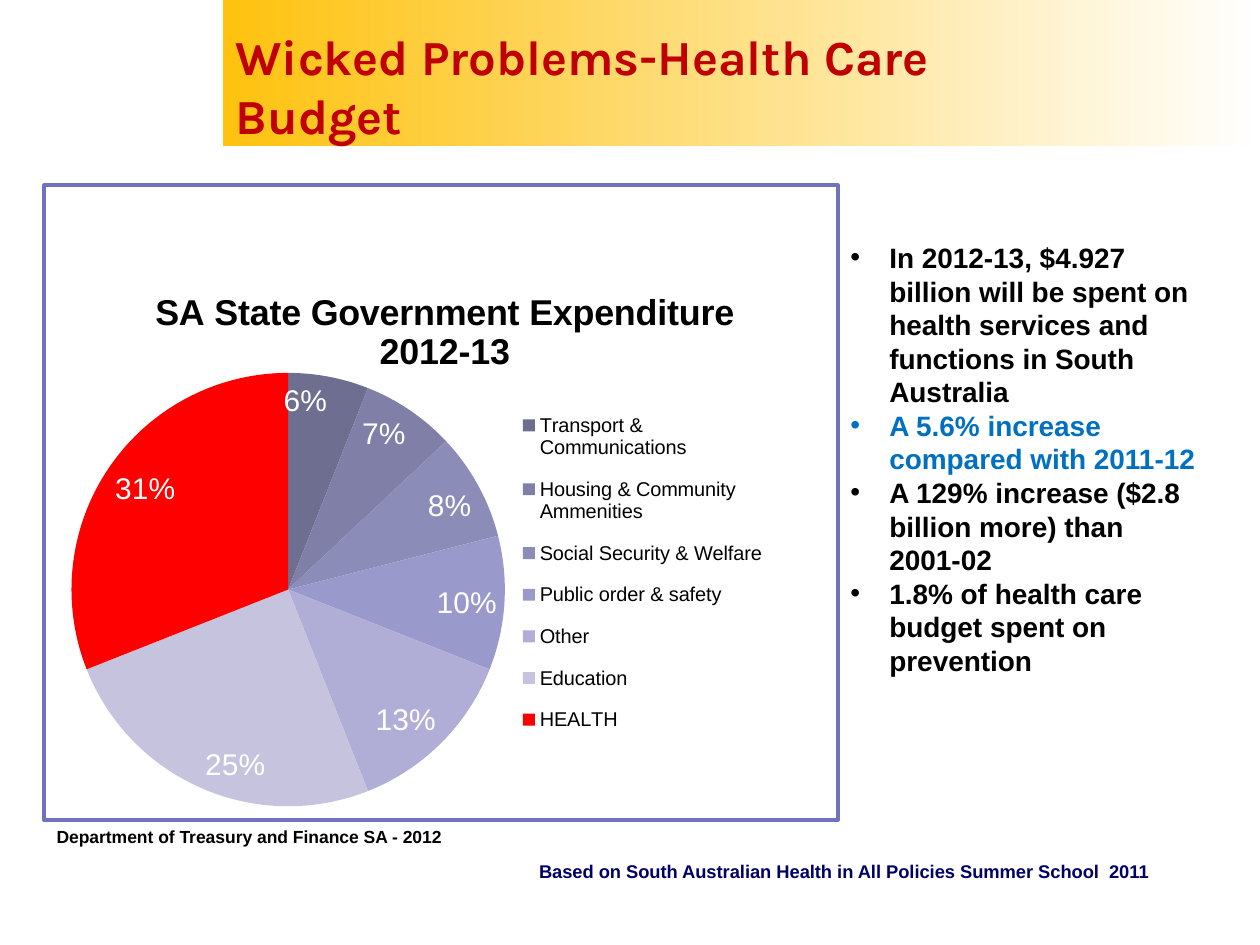
from lxml import etree
from pptx import Presentation
from pptx.chart.data import CategoryChartData
from pptx.dml.color import RGBColor
from pptx.enum.chart import XL_CHART_TYPE, XL_LABEL_POSITION, XL_LEGEND_POSITION
from pptx.enum.shapes import MSO_SHAPE
from pptx.enum.text import MSO_ANCHOR, PP_ALIGN
from pptx.oxml import parse_xml
from pptx.oxml.ns import nsdecls, qn
from pptx.util import Inches, Pt

TITLE = "Wicked Problems-Health Care Budget"
CHART_TITLE = "SA State Government Expenditure 2012-13"
EXPENDITURE = [  # category, share, slice colour
    ("Transport & Communications", 0.06, "6E6E91"),
    ("Housing & Community Ammenities", 0.07, "807FA8"),
    ("Social Security & Welfare", 0.08, "8C8CB9"),
    ("Public order & safety", 0.10, "9A99CC"),
    ("Other", 0.13, "B0AED6"),
    ("Education", 0.25, "C5C3DE"),
    ("HEALTH", 0.31, "FF0000"),
]
BULLETS = [
    ("In 2012-13, $4.927 billion will be spent on health services and "
     "functions in South Australia", "000000"),
    ("A 5.6% increase compared with 2011-12", "0070C0"),
    ("A 129% increase ($2.8 billion more) than 2001-02", "000000"),
    ("1.8% of health care budget spent on prevention", "000000"),
]
NOTES = [  # text, box, size, colour
    ("Department of Treasury and Finance SA - 2012",
     (0.35, 6.51, 3.31, 0.27), 10, "000000"),
    ("Based on South Australian Health in All Policies Summer School\u00a0 2011".replace("\u00a0", " "),
     (4.18, 6.78, 5.23, 0.28), 10.5, "000066"),
]


def rgb(value):
    return RGBColor.from_string(value)


def set_font(font, size, color, bold=False, name="Arial"):
    font.name, font.size, font.bold = name, Pt(size), bold
    font.color.rgb = rgb(color)


def add_run(paragraph, text, size, color, name="Arial"):
    run = paragraph.add_run()
    run.text = text
    set_font(run.font, size, color, True, name)


def add_rectangle(slide, box):
    shape = slide.shapes.add_shape(MSO_SHAPE.RECTANGLE, *map(Inches, box))
    shape.shadow.inherit = False
    return shape


def add_text_frame(slide, box):
    frame = slide.shapes.add_textbox(*map(Inches, box)).text_frame
    frame.word_wrap = True
    return frame


def set_layout(parent, successor_tags, x, y, w, h, inner=False):
    """Place a chart part by fractions of the chart area."""
    for old in parent.findall(qn("c:layout")):
        parent.remove(old)
    target = '<c:layoutTarget val="inner"/>' if inner else ""
    layout = parse_xml(
        f'<c:layout {nsdecls("c")}><c:manualLayout>{target}'
        '<c:xMode val="edge"/><c:yMode val="edge"/>'
        f'<c:x val="{x}"/><c:y val="{y}"/><c:w val="{w}"/><c:h val="{h}"/>'
        '</c:manualLayout></c:layout>')
    next(child for child in parent
         if child.tag in map(qn, successor_tags)).addprevious(layout)


presentation = Presentation()
presentation.slide_width, presentation.slide_height = Inches(10), Inches(7.5)
slide = presentation.slides.add_slide(presentation.slide_layouts[5])

# Title band and chart frame
band = add_rectangle(slide, (1.77, 0, 8.23, 1.16))
band.fill.gradient()
band.fill.gradient_angle = 0
for stop, (position, color) in zip(band.fill.gradient_stops,
                                   [(0, "FEC20F"), (1, "FFFFFF")]):
    stop.position, stop.color.rgb = position, rgb(color)
band.line.fill.background()

chart_frame = add_rectangle(slide, (0.35, 1.47, 6.3, 5.04))
chart_frame.fill.background()
chart_frame.line.color.rgb = rgb("7171BD")
chart_frame.line.width = Pt(2)

# Title, moved in front of the band
title = slide.shapes.title
title.left, title.top, title.width, title.height = map(
    Inches, (1.77, 0.17, 6.38, 1.01))
chart_frame.element.addnext(title.element)
title.text_frame.word_wrap = True
title.text_frame.vertical_anchor = MSO_ANCHOR.MIDDLE
paragraph = title.text_frame.paragraphs[0]
paragraph.alignment = PP_ALIGN.LEFT
add_run(paragraph, TITLE, 28, "C00000", "Karla")

# Pie chart
chart_data = CategoryChartData(number_format="0%")
chart_data.categories = [category for category, _, _ in EXPENDITURE]
chart_data.add_series(CHART_TITLE, [share for _, share, _ in EXPENDITURE])
chart = slide.shapes.add_chart(
    XL_CHART_TYPE.PIE, *map(Inches, (0.26, 2.1, 6.54, 4.7)), chart_data).chart
set_font(chart.font, 17.1, "000000")
chart.has_title = True
add_run(chart.chart_title.text_frame.paragraphs[0], CHART_TITLE, 20.5, "000000")
chart.chart_title.include_in_layout = False

plot = chart.plots[0]
plot.vary_by_categories = True
for index, (_, _, color) in enumerate(EXPENDITURE):
    fill = plot.series[0].points[index].format.fill
    fill.solid()
    fill.fore_color.rgb = rgb(color)
plot.has_data_labels = True
labels = plot.data_labels
labels.show_value, labels.show_percentage = True, False
labels.number_format, labels.number_format_is_linked = "0%", False
labels.position = XL_LABEL_POSITION.INSIDE_END
set_font(labels.font, 17.1, "FFFFFF")

chart.has_legend = True
legend = chart.legend
legend.position = XL_LEGEND_POSITION.RIGHT
legend.include_in_layout = False
set_font(legend.font, 11.4, "000000")
plot_area = chart.element.find(".//" + qn("c:plotArea"))
set_layout(plot_area, ["c:pieChart"], 0.047, 0.183, 0.526, 0.732, inner=True)
set_layout(chart.element.find(".//" + qn("c:legend")),
           ["c:overlay", "c:txPr"], 0.59, 0.22, 0.3, 0.6)

# Bullets
bullet_frame = add_text_frame(slide, (6.65, 1.86, 2.99, 3.97))
for index, (text, color) in enumerate(BULLETS):
    paragraph = (bullet_frame.add_paragraph() if index
                 else bullet_frame.paragraphs[0])
    properties = paragraph._p.get_or_add_pPr()
    properties.set("marL", str(Inches(0.31)))
    properties.set("indent", str(Inches(-0.31)))
    etree.SubElement(properties, qn("a:buFont")).set("typeface", "Arial")
    etree.SubElement(properties, qn("a:buChar")).set("char", "•")
    add_run(paragraph, text, 16, color)

# Source notes
for text, box, size, color in NOTES:
    add_run(add_text_frame(slide, box).paragraphs[0], text, size, color)

presentation.save("out.pptx")
